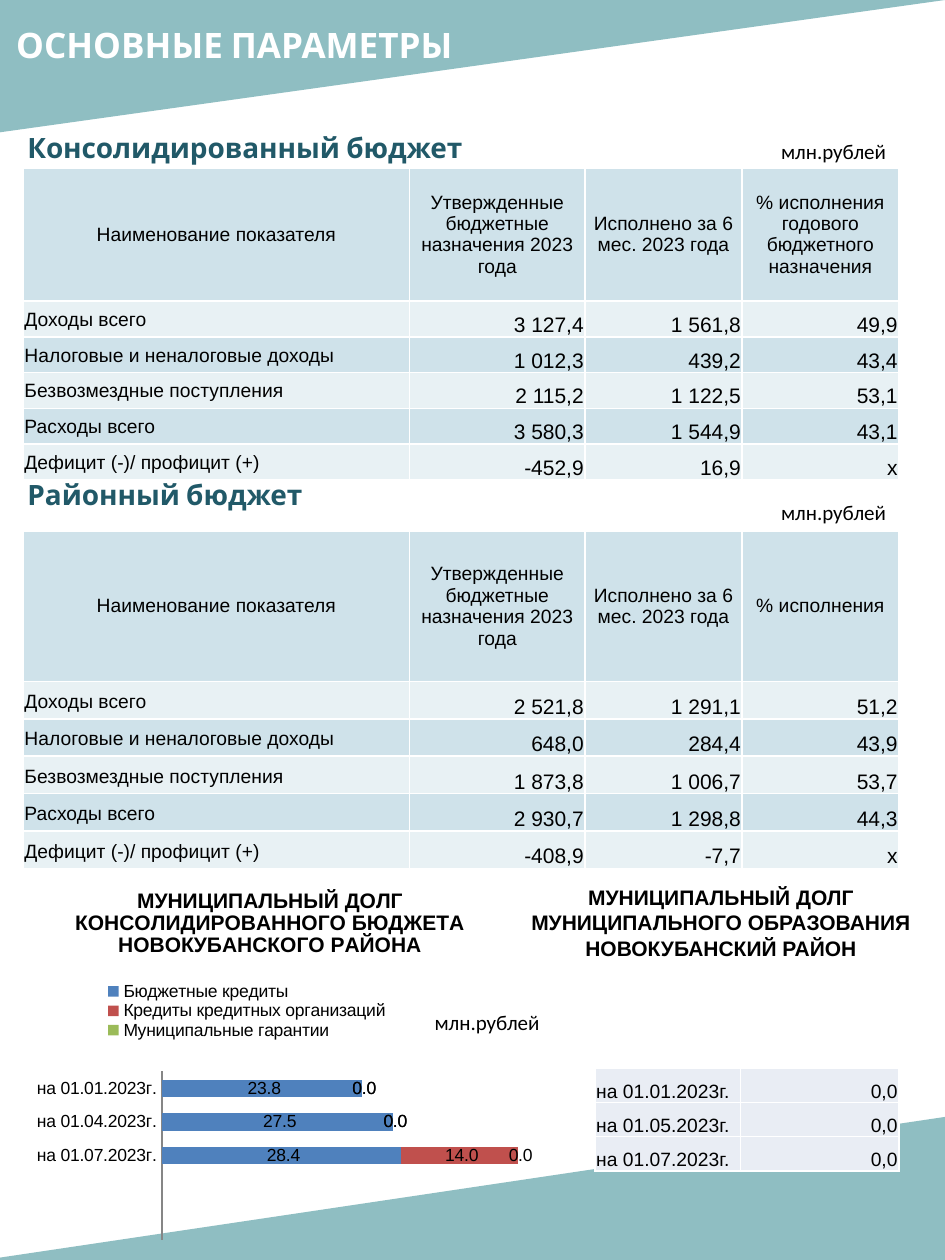
from dataclasses import dataclass

from lxml import etree
from pptx import Presentation
from pptx.chart.data import CategoryChartData
from pptx.dml.color import RGBColor
from pptx.enum.chart import XL_CHART_TYPE as ChartType, XL_LEGEND_POSITION as LegendPosition
from pptx.enum.chart import XL_TICK_MARK as TickMark
from pptx.enum.shapes import MSO_SHAPE as Shape
from pptx.enum.text import MSO_ANCHOR as Anchor, MSO_AUTO_SIZE as AutoSize, PP_ALIGN as Align
from pptx.oxml import parse_xml
from pptx.oxml.ns import nsdecls, qn
from pptx.util import Pt


@dataclass(frozen=True)
class Theme:
    teal: str = "519AA0"
    heading: str = "215968"
    white: str = "FFFFFF"
    black: str = "000000"
    bands: tuple = ("CFE2EA", "E8F1F4")
    debt_fill: str = "E9EDF4"
    axis: str = "868686"
    series: tuple = ("4F81BD", "C0504D", "9BBB59")
    title_size: int = 20
    heading_size: int = 16
    value_size: int = 12
    label_size: int = 11
    chart_size: int = 10
    display: str = "Cabin"
    body: str = "Arial"
    unit: str = "Calibri"


THEME = Theme()
CHART_WIDTH, CHART_HEIGHT = 340, 242.6
NUMBER_FORMAT = r"#\ ##0.0"
UNIT = "млн.рублей"
HEADERS = ["Наименование показателя", "Утвержденные бюджетные назначения 2023 года",
           "Исполнено за 6 мес. 2023 года"]
INDICATORS = ["Доходы всего", "Налоговые и неналоговые доходы", "Безвозмездные поступления",
              "Расходы всего", "Дефицит (-)/ профицит (+)"]
CONSOLIDATED = [("3 127,4", "1 561,8", "49,9"), ("1 012,3", "439,2", "43,4"),
                ("2 115,2", "1 122,5", "53,1"), ("3 580,3", "1 544,9", "43,1"),
                ("-452,9", "16,9", "х")]
DISTRICT = [("2 521,8", "1 291,1", "51,2"), ("648,0", "284,4", "43,9"),
            ("1 873,8", "1 006,7", "53,7"), ("2 930,7", "1 298,8", "44,3"),
            ("-408,9", "-7,7", "х")]
DEBT_DATES = ["на 01.01.2023г.", "на 01.05.2023г.", "на 01.07.2023г."]
CREDIT_DATES = ["на 01.01.2023г.", "на 01.04.2023г.", "на 01.07.2023г."]
CREDITS = {"Бюджетные кредиты": (23.8, 27.5, 28.4),
           "Кредиты кредитных организаций": (0, 0, 14),
           "Муниципальные гарантии": (0, 0, 0)}


def color(value):
    return RGBColor.from_string(value)


def set_font(font, size, name, tint=THEME.black, bold=False):
    font.size, font.name, font.bold = Pt(size), name, bold
    font.color.rgb = color(tint)


def add_corner(page, left, top, width, height, flip):
    corner = page.shapes.add_shape(Shape.RIGHT_TRIANGLE, Pt(left), Pt(top), Pt(width), Pt(height))
    corner.shadow.inherit = False
    corner.rotation = 180
    corner._element.spPr.find(qn("a:xfrm")).set(flip, "1")
    corner.fill.solid()
    corner.fill.fore_color.rgb = color(THEME.teal)
    tint = corner._element.spPr.find(".//" + qn("a:srgbClr"))
    etree.SubElement(tint, qn("a:alpha")).set("val", "64000")
    corner.line.fill.background()


def add_text(page, text, left, top, width, height, size, name, tint=THEME.black,
             bold=False, align=Align.LEFT, wrap=True):
    box = page.shapes.add_textbox(Pt(left), Pt(top), Pt(width), Pt(height))
    frame = box.text_frame
    frame.word_wrap = wrap
    frame.auto_size = AutoSize.SHAPE_TO_FIT_TEXT
    para = frame.paragraphs[0]
    para.text, para.alignment = text, align
    set_font(para.font, size, name, tint, bold)


def add_unit(page, left, top):
    add_text(page, UNIT, left, top, 76, 21.8, THEME.value_size, THEME.unit, wrap=False)


def fill_cell(cell, text, fill, size, align, anchor, padding):
    cell.fill.solid()
    cell.fill.fore_color.rgb = color(fill)
    cell.vertical_anchor = anchor
    cell.margin_left = cell.margin_right = Pt(0.7)
    cell.margin_top, cell.margin_bottom = (Pt(gap) for gap in padding)
    para = cell.text_frame.paragraphs[0]
    para.text, para.alignment = text, align
    set_font(para.font, size, THEME.body)
    # Borders come before the fill in the cell properties
    for index, side in enumerate(("lnL", "lnR", "lnT", "lnB")):
        cell._tc.get_or_add_tcPr().insert(index, parse_xml(
            f'<a:{side} {nsdecls("a")} w="12192"><a:solidFill>'
            f'<a:srgbClr val="{THEME.white}"/></a:solidFill></a:{side}>'))


def add_grid(page, left, top, widths, heights):
    frame = page.shapes.add_table(len(heights), len(widths), Pt(left), Pt(top),
                                  Pt(sum(widths)), Pt(sum(heights)))
    table = frame.table
    table.first_row = table.horz_banding = False
    for column, width in zip(table.columns, widths):
        column.width = Pt(width)
    for row, height in zip(table.rows, heights):
        row.height = Pt(height)
    return table


def add_budget_table(page, top, header_height, row_height, last_header, values):
    heights = [header_height] + [row_height] * len(values)
    table = add_grid(page, 13.3, top, [220.8, 100.2, 89.8, 89.6], heights)
    rows = [HEADERS + [last_header]]
    rows += [[name, *numbers] for name, numbers in zip(INDICATORS, values)]
    for r, row in enumerate(rows):
        for c, text in enumerate(row):
            if r == 0:
                look = THEME.label_size, Align.CENTER, Anchor.MIDDLE, (3.6, 3.6)
            elif c == 0:
                look = THEME.label_size, Align.LEFT, Anchor.BOTTOM, (3.6, 3.6)
            else:
                look = THEME.value_size, Align.RIGHT, Anchor.BOTTOM, (0.7, 0)
            fill_cell(table.cell(r, c), text, THEME.bands[r % 2], *look)


def add_debt_table(page):
    table = add_grid(page, 340, 610.6, [83.2, 90.4], [19.5] * len(DEBT_DATES))
    for r, date in enumerate(DEBT_DATES):
        for c, (text, align) in enumerate(((date, Align.LEFT), ("0,0", Align.RIGHT))):
            fill_cell(table.cell(r, c), text, THEME.debt_fill, THEME.label_size,
                      align, Anchor.BOTTOM, (0.7, 0))


def place_part(part, index, target="", **place):
    """Place a chart part; lengths are points inside the chart."""
    for layout in part.findall(qn("c:layout")):
        part.remove(layout)
    whole = {"x": CHART_WIDTH, "w": CHART_WIDTH, "y": CHART_HEIGHT, "h": CHART_HEIGHT}
    inner = f'<c:layoutTarget val="{target}"/>' if target else ""
    modes = "".join(f'<c:{key}Mode val="edge"/>' for key in "xy")
    sizes = "".join(f'<c:{key} val="{Pt(value) / Pt(whole[key]):.4f}"/>'
                    for key, value in place.items())
    part.insert(index, parse_xml(f'<c:layout {nsdecls("c")}><c:manualLayout>{inner}{modes}{sizes}'
                                 '</c:manualLayout></c:layout>'))


def add_credit_chart(page):
    data = CategoryChartData(number_format=NUMBER_FORMAT)
    data.categories = CREDIT_DATES + ["", ""]  # two free rows below the dates
    for name, values in CREDITS.items():
        data.add_series(name, values + (None, None))
    chart = page.shapes.add_chart(ChartType.BAR_STACKED, Pt(0), Pt(477.4), Pt(CHART_WIDTH),
                                  Pt(CHART_HEIGHT), data).chart
    set_font(chart.font, THEME.chart_size, THEME.body)
    chart._chartSpace.find(qn("c:txPr")).addprevious(parse_xml(
        f'<c:spPr {nsdecls("c", "a")}><a:noFill/><a:ln><a:noFill/></a:ln></c:spPr>'))

    # Title and legend
    para = chart.chart_title.text_frame.paragraphs[0]
    para.text = "МУНИЦИПАЛЬНЫЙ ДОЛГ КОНСОЛИДИРОВАННОГО БЮДЖЕТА НОВОКУБАНСКОГО РАЙОНА"
    set_font(para.font, THEME.value_size, THEME.body, bold=True)
    place_part(chart.chart_title._element, 1, x=40.8, y=27.5)
    chart.has_legend = True
    chart.legend.position = LegendPosition.TOP
    chart.legend.include_in_layout = False
    place_part(chart.legend._element, 1, x=56, y=83.5, w=170, h=33)

    # Axes
    dates, amounts = chart.category_axis, chart.value_axis
    dates.reverse_order = True
    dates.major_tick_mark = dates.minor_tick_mark = TickMark.NONE
    dates.format.line.color.rgb = color(THEME.axis)
    amounts.visible = amounts.has_major_gridlines = False
    amounts.minimum_scale, amounts.maximum_scale = 0, 45

    # Bars
    plot = chart.plots[0]
    plot.gap_width, plot.overlap, plot.vary_by_categories = 95, 100, False
    for series, tint in zip(plot.series, THEME.series):
        series.format.fill.solid()
        series.format.fill.fore_color.rgb = color(tint)
        labels = series.data_labels
        labels.show_value = True
        labels.number_format, labels.number_format_is_linked = NUMBER_FORMAT, False
    place_part(chart._chartSpace.chart.plotArea, 0, "inner", x=92.5, y=134.9, w=216.2, h=96.3)


def main():
    deck = Presentation()
    deck.slide_width, deck.slide_height = Pt(540), Pt(720)
    page = deck.slides.add_slide(deck.slide_layouts[6])

    # Background corners
    add_corner(page, 0, 0, 540, 75.6, "flipH")
    add_corner(page, -9.4, 638, 550.8, 82, "flipV")

    # Headings and units
    add_text(page, "ОСНОВНЫЕ ПАРАМЕТРЫ", 2.2, 10, 350.6, 31, THEME.title_size,
             THEME.display, THEME.white, True)
    for text, top in (("Консолидированный бюджет", 71), ("Районный бюджет", 269.3)):
        add_text(page, text, 8.6, top, 350.6, 26, THEME.heading_size,
                 THEME.display, THEME.heading, True)
    for left, top in ((439.2, 75.6), (439.2, 281.9), (241.2, 573.1)):
        add_unit(page, left, top)

    # Budget tables
    add_budget_table(page, 96, 76, 19, "% исполнения годового бюджетного назначения",
                     CONSOLIDATED)
    add_budget_table(page, 303.4, 86, 21.4, "% исполнения", DISTRICT)

    # Municipal debt
    add_text(page, "МУНИЦИПАЛЬНЫЙ ДОЛГ МУНИЦИПАЛЬНОГО ОБРАЗОВАНИЯ НОВОКУБАНСКИЙ РАЙОН",
             284, 502, 256, 65.5, THEME.value_size, THEME.body, bold=True, align=Align.CENTER)
    add_debt_table(page)
    add_credit_chart(page)

    deck.save("out.pptx")


if __name__ == "__main__":
    main()
